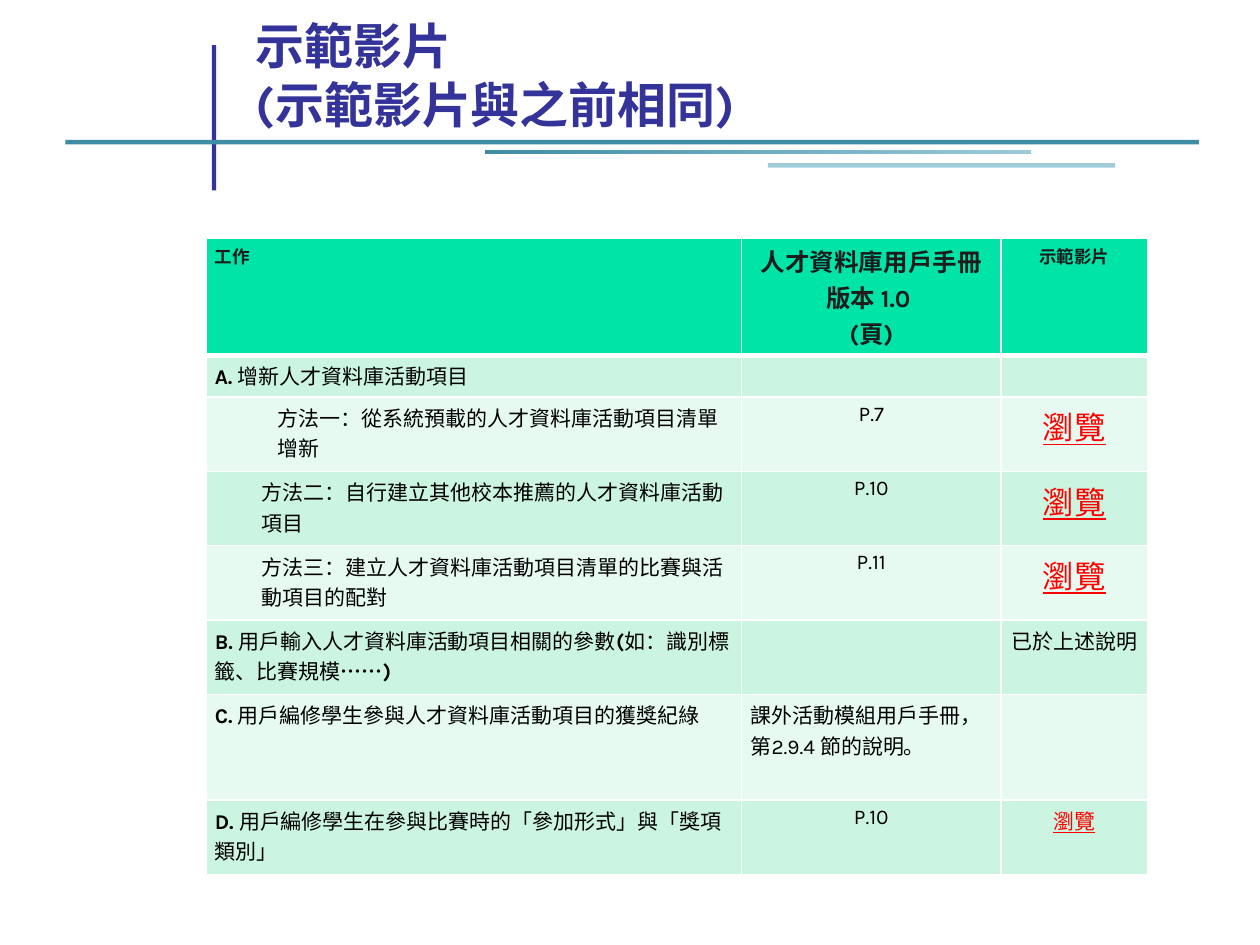
"""Build the demonstration video slide with its task table."""
from lxml.etree import SubElement
from pptx import Presentation
from pptx.dml.color import RGBColor
from pptx.enum.shapes import MSO_SHAPE
from pptx.enum.text import MSO_ANCHOR, MSO_AUTO_SIZE, PP_ALIGN
from pptx.oxml.ns import qn
from pptx.util import Cm, Pt


def colour(value):
    """Turn a hex string into a colour."""
    return RGBColor.from_string(value)


def write(para, text, size=12, color="000000", bold=False, underline=False):
    """Add one formatted run to a paragraph."""
    span = para.add_run()
    span.text = text
    span.font.name = "Karla"
    span.font.size = Pt(size)
    span.font.bold = bold
    span.font.underline = underline
    span.font.color.rgb = colour(color)


deck = Presentation()
deck.slide_width, deck.slide_height = Cm(25.4), Cm(19.05)
page = deck.slides.add_slide(deck.slide_layouts[5])

bars = [
    (4.27, 0.91, 0.09, 2.93, ["333399"]),
    (1.32, 2.82, 22.85, 0.09, ["3F8DA5"]),
    (9.78, 3.02, 11, 0.09, ["3F8DA5", "9BCAD9"]),
    (15.48, 3.29, 7, 0.09, ["A1CDDB"]),
]
for left, top, width, height, tones in bars:
    bar = page.shapes.add_shape(
        MSO_SHAPE.RECTANGLE, Cm(left), Cm(top), Cm(width), Cm(height))
    bar.shadow.inherit = False
    bar.line.fill.background()
    if len(tones) == 1:
        bar.fill.solid()
        bar.fill.fore_color.rgb = colour(tones[0])
    else:
        bar.fill.gradient()
        bar.fill.gradient_angle = 0
        for stop, tone in zip(bar.fill.gradient_stops, tones):
            stop.color.rgb = colour(tone)

title = page.shapes.title
title.left, title.top, title.width, title.height = Cm(4.9), Cm(0.71), Cm(19.9), Cm(2.1)
frame = title.text_frame
frame.word_wrap = True
frame.auto_size = MSO_AUTO_SIZE.NONE
frame.vertical_anchor = MSO_ANCHOR.BOTTOM
para = frame.paragraphs[0]
para.alignment = PP_ALIGN.LEFT
write(para, "示範影片 ", size=28, color="333399", bold=True)
para.add_line_break()
write(para, "(示範影片與之前相同)", size=28, color="333399", bold=True)

header = {"color": "1C1C1C", "bold": True}
strong = {"bold": True}
link = {"color": "FF0000", "underline": True}
view = [[("瀏覽", {"size": 18, **link})]]
rows = [
    [[[("工作", {"size": 10, **header})]],
     [[("人才資料庫用戶手冊 版本 1.0 ", {"size": 14, **header})],
      [("(頁)", {"size": 14, **header})]],
     [[("示範影片", {"size": 10, **header})]]],
    [[[("A. ", strong), ("增新人才資料庫活動項目", {})]], [[]], [[]]],
    [[[("方法一：從系統預載的人才資料庫活動項目清單增新", {})]], [[("P.7", {})]], view],
    [[[("方法二：自行建立其他校本推薦的人才資料庫活動項目", {})]], [[("P.10", {})]], view],
    [[[("方法三：建立人才資料庫活動項目清單的比賽與活動項目的配對", {})]], [[("P.11", {})]], view],
    [[[("B. ", strong), ("用戶輸入人才資料庫活動項目相關的參數", {}), ("(", strong),
       ("如：識別標籤、比賽規模", {}), ("……)", strong)]],
     [[]], [[("已於上述說明", {})]]],
    [[[("C. ", strong), ("用戶編修學生參與人才資料庫活動項目的獲獎紀綠", {})]],
     [[("課外活動模組用戶手冊，第2.9.4 節的說明。", {})]], [[]]],
    [[[("D. ", strong), ("用戶編修學生在參與比賽時的「參加形式」與「獎項類別」", {})]],
     [[("P.10", {})]], [[("瀏覽", link)]]],
]
column_widths = [10.8, 5.23, 2.95]
row_heights = [2.13, 0.84, 1.5, 1.5, 1.5, 1.5, 2.13, 1.5]
indents = {2: 1.27, 3: 0.95, 4: 0.95}
left_aligned = {(6, 1)}

table = page.shapes.add_table(
    len(rows), len(column_widths), Cm(4.15), Cm(4.8),
    Cm(sum(column_widths)), Cm(sum(row_heights))).table
for column, width in zip(table.columns, column_widths):
    column.width = Cm(width)
for row, height in zip(table.rows, row_heights):
    row.height = Cm(height)

for row_index, row in enumerate(rows):
    for column_index, paragraphs in enumerate(row):
        cell = table.cell(row_index, column_index)
        if paragraphs is not view:
            cell.margin_left = cell.margin_right = Cm(0.18)
            cell.margin_top = cell.margin_bottom = Cm(0.1)
        for index, spans in enumerate(paragraphs):
            frame = cell.text_frame
            para = frame.paragraphs[0] if index == 0 else frame.add_paragraph()
            if column_index and (row_index, column_index) not in left_aligned:
                para.alignment = PP_ALIGN.CENTER
            elif column_index == 0 and row_index in indents:
                para.level = 1
                properties = para._p.get_or_add_pPr()
                properties.set("marL", str(Cm(indents[row_index])))
                properties.set("indent", "0")
            for text, style in spans:
                write(para, text, **style)
            if not spans:
                SubElement(para._p, qn("a:endParaRPr"), sz="1200")
        for side in ("L", "R", "T", "B"):
            thick = (row_index, side) in {(0, "B"), (1, "T")}
            border = SubElement(cell._tc.get_or_add_tcPr(), qn(f"a:ln{side}"),
                                w=str(Pt(3 if thick else 1)))
            fill = SubElement(border, qn("a:solidFill"))
            SubElement(fill, qn("a:srgbClr"), val="FFFFFF")
        cell.fill.solid()
        band = "CCF5E1" if row_index % 2 else "E7FAF1"
        cell.fill.fore_color.rgb = colour(band if row_index else "00E4A8")

deck.save("out.pptx")
